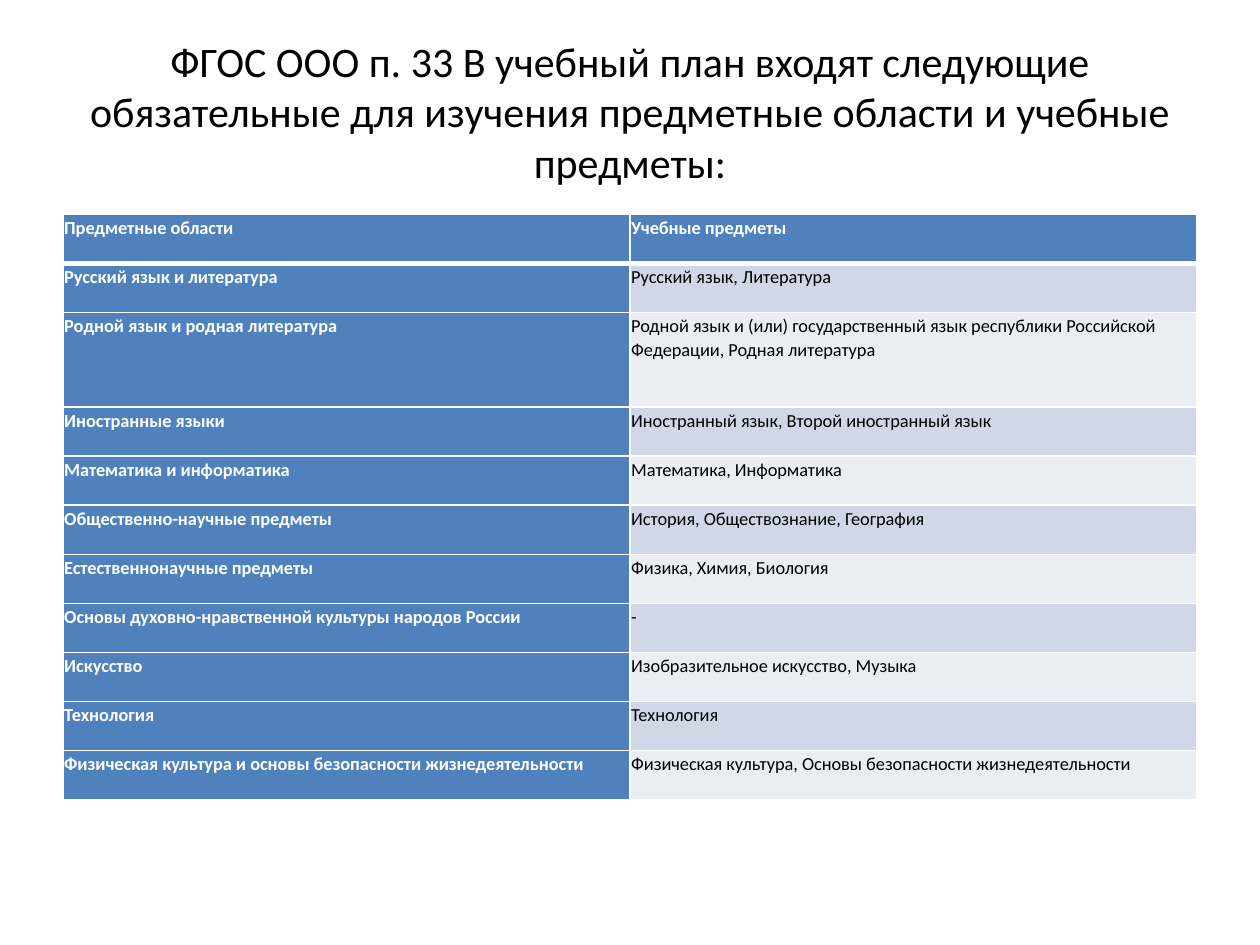
from lxml import etree
from pptx import Presentation
from pptx.dml.color import RGBColor
from pptx.enum.text import MSO_ANCHOR, MSO_AUTO_SIZE, PP_ALIGN
from pptx.oxml.ns import qn
from pptx.util import Inches, Pt

CENTER = PP_ALIGN.CENTER
MIDDLE = MSO_ANCHOR.MIDDLE
NO_AUTOFIT = MSO_AUTO_SIZE.NONE

BLACK = RGBColor(0x00, 0x00, 0x00)
WHITE = RGBColor(0xFF, 0xFF, 0xFF)
BLUE = RGBColor(0x4F, 0x81, 0xBD)
DARK_BAND = RGBColor(0xD0, 0xD8, 0xE8)
LIGHT_BAND = RGBColor(0xE9, 0xED, 0xF4)

FONT = "Calibri"
ROW_HEIGHT = Inches(0.39)
TALL_ROW, TALL_ROW_HEIGHT = 2, Inches(0.75)
CELL_MARGIN = Inches(0.01)

HEADING = (
    "ФГОС ООО п. 33 В учебный план входят следующие обязательные "
    "для изучения предметные области и учебные предметы:"
)
CURRICULUM = [
    ("Предметные области", "Учебные предметы"),
    ("Русский язык и литература", "Русский язык, Литература"),
    ("Родной язык и родная литература",
     "Родной язык и (или) государственный язык республики Российской "
     "Федерации, Родная литература"),
    ("Иностранные языки", "Иностранный язык, Второй иностранный язык"),
    ("Математика и информатика", "Математика, Информатика"),
    ("Общественно-научные предметы", "История, Обществознание, География"),
    ("Естественнонаучные предметы", "Физика, Химия, Биология"),
    ("Основы духовно-нравственной культуры народов России", "-"),
    ("Искусство", "Изобразительное искусство, Музыка"),
    ("Технология", "Технология"),
    ("Физическая культура и основы безопасности жизнедеятельности",
     "Физическая культура, Основы безопасности жизнедеятельности"),
]


def add_run(paragraph, text, size, color, bold=False):
    run = paragraph.add_run()
    run.text = text
    run.font.name = FONT
    run.font.size = Pt(size)
    run.font.bold = bold
    run.font.color.rgb = color


def set_borders(cell, top, bottom):
    properties = cell._tc.get_or_add_tcPr()
    for side, width in (("L", 1), ("R", 1), ("T", top), ("B", bottom)):
        border = etree.SubElement(properties, qn(f"a:ln{side}"), w=str(Pt(width)))
        fill = etree.SubElement(border, qn("a:solidFill"))
        etree.SubElement(fill, qn("a:srgbClr"), val=str(WHITE))


def fill_cell(cell, text, row, column):
    is_heading = row == 0 or column == 0
    cell.margin_left = cell.margin_right = CELL_MARGIN
    cell.margin_top = cell.margin_bottom = CELL_MARGIN
    set_borders(cell, top=3 if row == 1 else 1, bottom=3 if row == 0 else 1)
    cell.fill.solid()
    band = DARK_BAND if row % 2 else LIGHT_BAND
    cell.fill.fore_color.rgb = BLUE if is_heading else band
    paragraph = cell.text_frame.paragraphs[0]
    paragraph.line_spacing = 1.07
    add_run(paragraph, text, 10.5, WHITE if is_heading else BLACK, is_heading)


def place_heading(slide, left, top, width, height):
    heading = slide.shapes.title
    heading.left, heading.top = left, top
    heading.width, heading.height = width, height
    frame = heading.text_frame
    frame.word_wrap = True
    frame.auto_size = NO_AUTOFIT
    frame.vertical_anchor = MIDDLE
    paragraph = frame.paragraphs[0]
    paragraph.alignment = CENTER
    add_run(paragraph, HEADING, 24, BLACK)


def place_curriculum(slide, left, top, width):
    heights = [TALL_ROW_HEIGHT if row == TALL_ROW else ROW_HEIGHT
               for row in range(len(CURRICULUM))]
    curriculum = slide.shapes.add_table(
        len(CURRICULUM), 2, left, top, width, sum(heights)).table
    curriculum.first_col = True
    for row, (height, texts) in enumerate(zip(heights, CURRICULUM)):
        curriculum.rows[row].height = height
        for column, text in enumerate(texts):
            fill_cell(curriculum.cell(row, column), text, row, column)


def main():
    presentation = Presentation()
    presentation.slide_width = Inches(10)
    presentation.slide_height = Inches(7.5)
    title_only = presentation.slide_layouts[5]
    slide = presentation.slides.add_slide(title_only)
    place_heading(slide, Inches(0.5), Inches(0.21), Inches(9), Inches(1.34))
    place_curriculum(slide, Inches(0.5), Inches(1.7), Inches(9))
    presentation.save("out.pptx")


if __name__ == "__main__":
    main()
